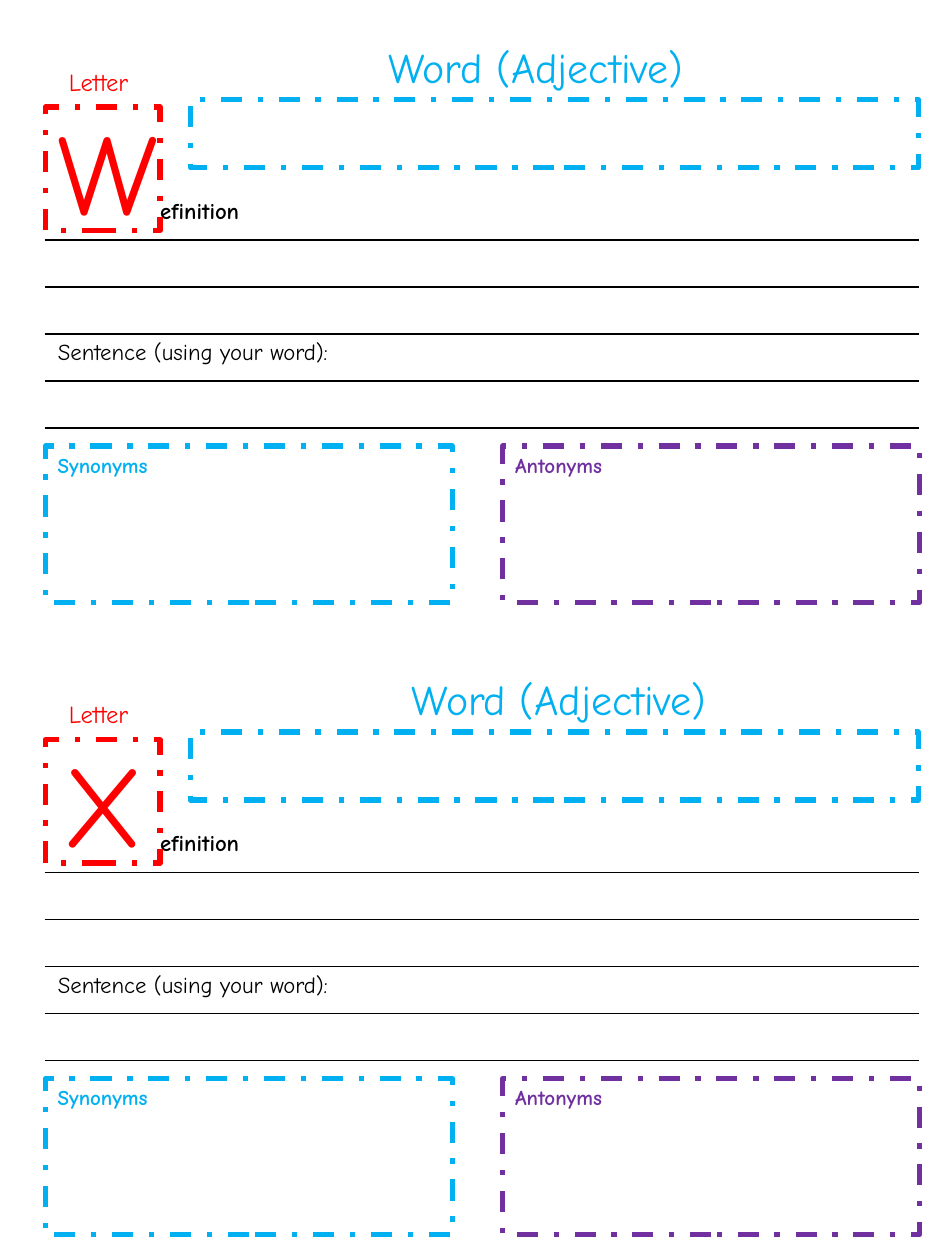
import pptx
import pptx.util
import pptx.oxml
import pptx.dml.color
import pptx.enum.dml
import pptx.enum.shapes
import pptx.enum.text

Inches, Pt = pptx.util.Inches, pptx.util.Pt
RGB = pptx.dml.color.RGBColor.from_string
ALIGN = pptx.enum.text.PP_ALIGN
ANCHOR = pptx.enum.text.MSO_ANCHOR

# Content: one word card per letter, with the box of its heading
CARDS = [
    {"letter": "W", "head": "Word (Adjective)", "left": 2.57, "width": 3.36},
    {"letter": "X", "head": "Word (Adjective) ", "left": 2.73, "width": 3.52},
]
# Row: (text, bold, left margin)
LINES = {0: ("Definition", True, 0.8), 3: ("Sentence (using your word):", False, 0.1)}
BOXES = [("Synonyms", "blue", 0.36, 3.23), ("Antonyms", "purple", 3.99, 3.31)]

THEME = {
    "font": "Comic Neue",
    "red": "FF0000", "blue": "00B0F0", "purple": "7030A0",
    "black": "000000", "white": "FFFFFF",
    "letter": 66, "head": 24, "label": 14, "line": 13, "box": 12,
    "edge": 3, "rule": 1,
}
STEP = 5.02          # distance from one card to the next
LEFT, WIDE = 0.36, 6.93
ROWS, COLS, HIGH = 5, 2, 1.87


def place(left, top, width, height):
    return [Inches(n) for n in (left, top, width, height)]


def write(frame, text, size, color, bold=False, align=ALIGN.LEFT, anchor=ANCHOR.TOP):
    frame.text = text
    frame.word_wrap = True
    frame.vertical_anchor = anchor
    para = frame.paragraphs[0]
    para.alignment = align
    font = para.runs[0].font
    font.name, font.size, font.bold = THEME["font"], Pt(THEME[size]), bold
    font.color.rgb = RGB(THEME[color])


def frame_box(slide, area, color, fill=None):
    box = slide.shapes.add_shape(pptx.enum.shapes.MSO_SHAPE.RECTANGLE, *place(*area))
    box.shadow.inherit = False
    if fill:
        box.fill.solid()
        box.fill.fore_color.rgb = RGB(THEME[fill])
    else:
        box.fill.background()
    box.line.color.rgb = RGB(THEME[color])
    box.line.width = Pt(THEME["edge"])
    box.line.dash_style = pptx.enum.dml.MSO_LINE.DASH_DOT
    return box


def border(cell, sides):
    props = cell._tc.get_or_add_tcPr()
    for spot, (side, color) in enumerate(sides.items()):
        props.insert(spot, pptx.oxml.parse_xml(
            f'<a:ln{side} xmlns:a="http://schemas.openxmlformats.org/drawingml/2006/main"'
            f' w="{Pt(THEME["rule"])}"><a:solidFill><a:srgbClr val="{THEME[color]}"/>'
            f'</a:solidFill><a:prstDash val="solid"/></a:ln{side}>'))


def add_lines(slide, top):
    table = slide.shapes.add_table(ROWS, COLS, *place(LEFT, top, WIDE, HIGH)).table
    table.first_row = table.horz_banding = False
    for row in range(ROWS):
        for col in range(COLS):
            cell = table.cell(row, col)
            cell.fill.solid()
            cell.fill.fore_color.rgb = RGB(THEME["white"])
            border(cell, {"L": "white", "R": "white",
                          "T": "black" if row else "white", "B": "black"})
            cell.text_frame.paragraphs[0].font.size = Pt(THEME["line"])
        if row in LINES:
            text, bold, inset = LINES[row]
            cell = table.cell(row, 0)
            write(cell.text_frame, text, "line", "black", bold)
            cell.margin_left = Inches(inset)
            cell.vertical_anchor = ANCHOR.TOP


def add_card(slide, card, top, title=None):
    # Writing lines, then the letter over their corner
    add_lines(slide, top + 1.53)
    box = frame_box(slide, (LEFT, top + 0.85, 0.91, 0.98), "red", "white")
    write(box.text_frame, card["letter"], "letter", "red",
          align=ALIGN.CENTER, anchor=ANCHOR.MIDDLE)
    label = slide.shapes.add_textbox(*place(LEFT, top + 0.48, 0.91, 0.34))
    write(label.text_frame, "Letter ", "label", "red", align=ALIGN.CENTER)

    # Word box and its heading
    frame_box(slide, (1.51, top + 0.79, 5.78, 0.54), "blue")
    area = place(card["left"], top + 0.28, card["width"], 0.5)
    if title is None:
        title = slide.shapes.add_textbox(*area)
    title.left, title.top, title.width, title.height = area
    title.text_frame.auto_size = pptx.enum.text.MSO_AUTO_SIZE.NONE
    write(title.text_frame, card["head"], "head", "blue", align=ALIGN.CENTER)

    # Synonyms and antonyms
    for text, color, left, width in BOXES:
        box = frame_box(slide, (left, top + 3.54, width, 1.24), color)
        write(box.text_frame, text, "box", color, True)


def main():
    deck = pptx.Presentation()
    deck.slide_width, deck.slide_height = Inches(7.5), Inches(10)
    slide = deck.slides.add_slide(deck.slide_layouts[5])
    titles = [slide.shapes.title, None]
    for count, (card, title) in enumerate(zip(CARDS, titles)):
        add_card(slide, card, count * STEP, title)
    deck.save("out.pptx")


if __name__ == "__main__":
    main()
